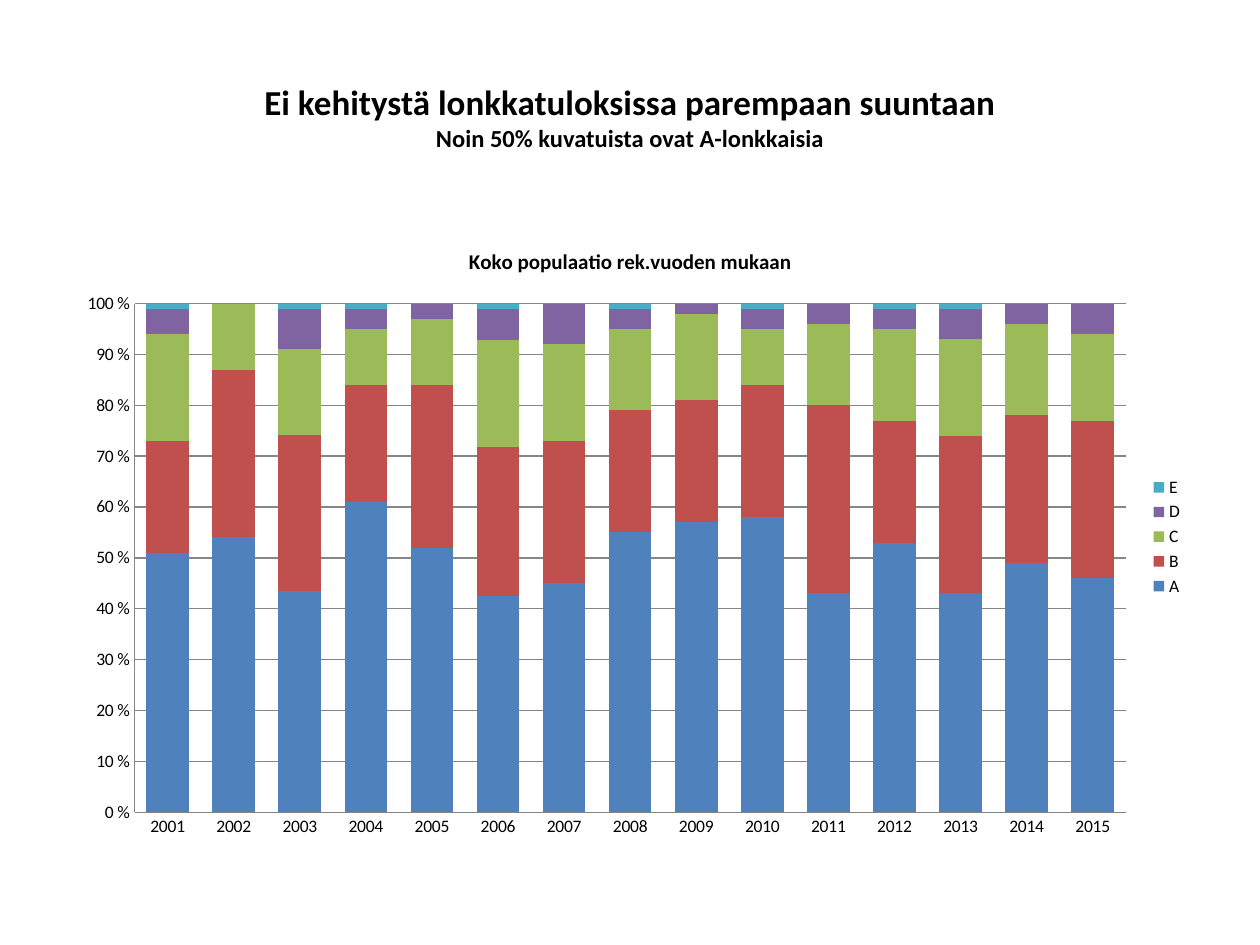
from lxml.etree import SubElement
from pptx import Presentation
from pptx.chart.data import CategoryChartData
from pptx.dml.color import RGBColor
from pptx.enum.chart import XL_CHART_TYPE, XL_LEGEND_POSITION, XL_TICK_MARK
from pptx.enum.text import MSO_ANCHOR, PP_ALIGN
from pptx.oxml.ns import qn
from pptx.util import Cm, Pt

COLORS = {
    "text": "000000", "grid": "868686",
    "A": "4F81BD", "B": "C0504D", "C": "9BBB59", "D": "8064A2", "E": "4BACC6",
}
GRADES = {
    "A": (51, 54, 44, 61, 52, 42, 45, 55, 57, 58, 43, 53, 43, 49, 46),
    "B": (22, 33, 31, 23, 32, 29, 28, 24, 24, 26, 37, 24, 31, 29, 31),
    "C": (21, 13, 17, 11, 13, 21, 19, 16, 17, 11, 16, 18, 19, 18, 17),
    "D": (5, 0, 8, 4, 3, 6, 8, 4, 2, 4, 4, 4, 6, 4, 6),
    "E": (1, 0, 1, 1, 0, 1, 0, 1, 0, 1, 0, 1, 1, 0, 0),
}


def color(name):
    return RGBColor.from_string(COLORS[name])


def style_font(font, size, bold=False):
    for key, value in {"name": "Calibri", "size": Pt(size), "bold": bold}.items():
        setattr(font, key, value)
    font.color.rgb = color("text")


deck = Presentation()
deck.slide_width, deck.slide_height = Cm(25.4), Cm(19.05)
page = deck.slides.add_slide(deck.slide_layouts[6])

# Heading: large line and smaller line in one paragraph
box = page.shapes.add_textbox(Cm(1.27), Cm(0.76), Cm(22.86), Cm(3.18))
frame_format = {"word_wrap": True, "vertical_anchor": MSO_ANCHOR.MIDDLE}
for key, value in frame_format.items():
    setattr(box.text_frame, key, value)
para = box.text_frame.paragraphs[0]
para.alignment = PP_ALIGN.CENTER
heading = (
    ("Ei kehitystä lonkkatuloksissa parempaan suuntaan", 20),
    ("Noin 50% kuvatuista ovat A-lonkkaisia", 14),
)
for index, (text, size) in enumerate(heading):
    if index:
        para.add_line_break()
    span = para.add_run()
    span.text = text
    style_font(span.font, size, True)

# Chart of grade shares by year
data = CategoryChartData()
data.categories = [str(year) for year in range(2001, 2016)]
for grade, shares in GRADES.items():
    data.add_series(grade, shares)
chart = page.shapes.add_chart(
    XL_CHART_TYPE.COLUMN_STACKED_100,
    Cm(1.3), Cm(4.52), Cm(22.81), Cm(12.6), data,
).chart
style_font(chart.font, 10)

# Chart title
chart.has_title = True
title = chart.chart_title
title.include_in_layout = False
title.text_frame.text = "Koko populaatio rek.vuoden mukaan"
style_font(title.text_frame.paragraphs[0].runs[0].font, 12, True)

# Legend
chart.has_legend = True
chart.legend.position = XL_LEGEND_POSITION.RIGHT
chart.legend.include_in_layout = False

# Columns
plot = chart.plots[0]
for key, value in {"gap_width": 55, "overlap": 100, "vary_by_categories": False}.items():
    setattr(plot, key, value)
for series in plot.series:
    series.format.fill.solid()
    series.format.fill.fore_color.rgb = color(series.name)

# Axes and gridlines
years, percents = chart.category_axis, chart.value_axis
for axis in (years, percents):
    axis.major_tick_mark = axis.minor_tick_mark = XL_TICK_MARK.NONE
scale = {"minimum_scale": 0, "maximum_scale": 1, "major_unit": 0.1,
         "has_major_gridlines": True}
for key, value in scale.items():
    setattr(percents, key, value)
percents.tick_labels.number_format = "0 %"
percents.tick_labels.number_format_is_linked = False
for item in (years, percents, percents.major_gridlines):
    item.format.line.color.rgb = color("grid")
    item.format.line.width = Pt(0.75)

# Inner plot area as shares of the chart frame
area = plot._element.getparent()
layout = area.find(qn("c:layout"))
if layout is None:
    layout = SubElement(area, qn("c:layout"))
    area.insert(0, layout)
manual = SubElement(layout, qn("c:manualLayout"))
placement = {"layoutTarget": "inner", "xMode": "edge", "yMode": "edge",
             "x": 0.062, "y": 0.127, "w": 0.876, "h": 0.814}
for key, value in placement.items():
    SubElement(manual, qn("c:" + key)).set("val", str(value))

deck.save("out.pptx")
